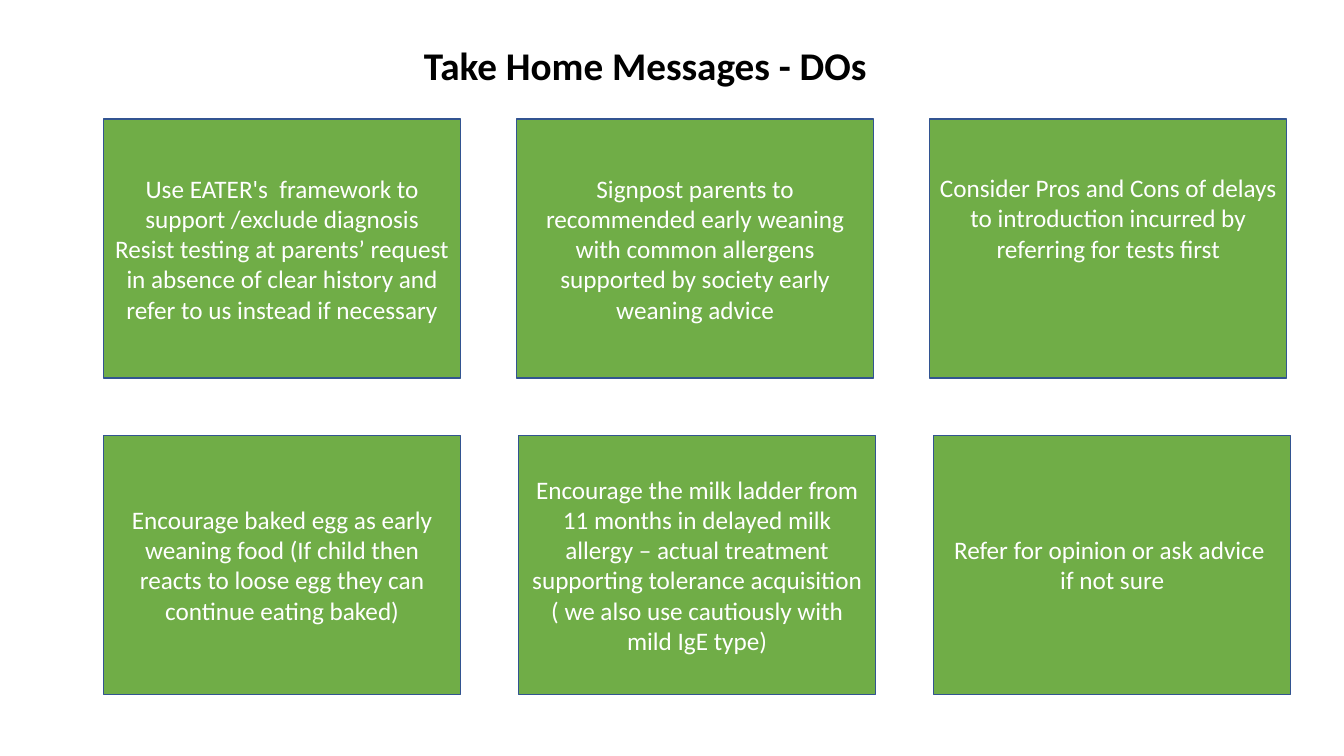
import pptx
import pptx.dml.color
import pptx.enum.shapes
import pptx.enum.text
import pptx.util

Cm = pptx.util.Cm
Pt = pptx.util.Pt


def colour(hex_string):
    return pptx.dml.color.RGBColor.from_string(hex_string)


class MessageSlide:
    """Holds the style and the current slide."""

    FONT = "Calibri"
    FILL = "70AD47"
    OUTLINE = "325491"
    BOX_TEXT = "FFFFFF"
    TITLE_TEXT = "000000"

    def __init__(self, presentation):
        self.slide = presentation.slides.add_slide(presentation.slide_layouts[5])

    def add_lines(self, frame, lines, size, text_colour, bold=False):
        frame.word_wrap = True
        frame.auto_size = pptx.enum.text.MSO_AUTO_SIZE.NONE
        for index, line in enumerate(lines):
            paragraph = frame.add_paragraph() if index else frame.paragraphs[0]
            paragraph.alignment = pptx.enum.text.PP_ALIGN.CENTER
            run = paragraph.add_run()
            run.text = line
            run.font.name = self.FONT
            run.font.size = Pt(size)
            run.font.bold = bold
            run.font.color.rgb = colour(text_colour)

    def title(self, text, left, top, width, height):
        shape = self.slide.shapes.title
        shape.left, shape.top = Cm(left), Cm(top)
        shape.width, shape.height = Cm(width), Cm(height)
        shape.text_frame.vertical_anchor = pptx.enum.text.MSO_ANCHOR.TOP
        self.add_lines(shape.text_frame, [text], 28, self.TITLE_TEXT, bold=True)

    def box(self, lines, left, top, width, height, bottom_margin):
        shape = self.slide.shapes.add_shape(
            pptx.enum.shapes.MSO_SHAPE.RECTANGLE,
            Cm(left), Cm(top), Cm(width), Cm(height))
        shape.shadow.inherit = False
        shape.fill.solid()
        shape.fill.fore_color.rgb = colour(self.FILL)
        shape.line.color.rgb = colour(self.OUTLINE)
        shape.line.width = Pt(1)
        frame = shape.text_frame
        frame.vertical_anchor = pptx.enum.text.MSO_ANCHOR.MIDDLE
        frame.margin_bottom = Cm(bottom_margin)
        self.add_lines(frame, lines, 18, self.BOX_TEXT)


# Each row: top, column step, then the boxes as (lines, bottom margin)
LEFT, WIDTH, HEIGHT = 2.61, 9, 6.53
PLAIN, RAISED = 0.13, 1.68
ROWS = [
    (3, 10.41, [
        (["Use EATER's\u00a0 framework to support /exclude diagnosis".replace("\u00a0", chr(160)),
          "Resist testing at parents’ request in absence of clear history "
          "and refer to us instead if necessary"], PLAIN),
        (["Signpost parents to recommended early weaning with common "
          "allergens supported by society early weaning advice"], PLAIN),
        (["Consider Pros and Cons of delays to introduction incurred by "
          "referring for tests first"], RAISED),
    ]),
    (10.97, 10.46, [
        (["Encourage baked egg as early weaning food (If child then reacts "
          "to loose egg they can continue eating baked)"], PLAIN),
        (["Encourage the milk ladder from 11 months in delayed milk allergy "
          "– actual treatment supporting tolerance acquisition",
          "( we also use cautiously with mild IgE type)"], PLAIN),
        (["Refer for opinion or ask advice ", " if not sure "], PLAIN),
    ]),
]


def main():
    presentation = pptx.Presentation()
    presentation.slide_width = Cm(33.87)
    presentation.slide_height = Cm(19.05)
    messages = MessageSlide(presentation)

    # Heading
    messages.title("Take Home Messages - DOs ", 7.9, 0.91, 16.94, 1.45)

    # Grid of advice boxes
    for top, step, boxes in ROWS:
        for column, (lines, bottom_margin) in enumerate(boxes):
            messages.box(lines, LEFT + column * step, top, WIDTH, HEIGHT,
                         bottom_margin)

    presentation.save("out.pptx")


if __name__ == "__main__":
    main()
